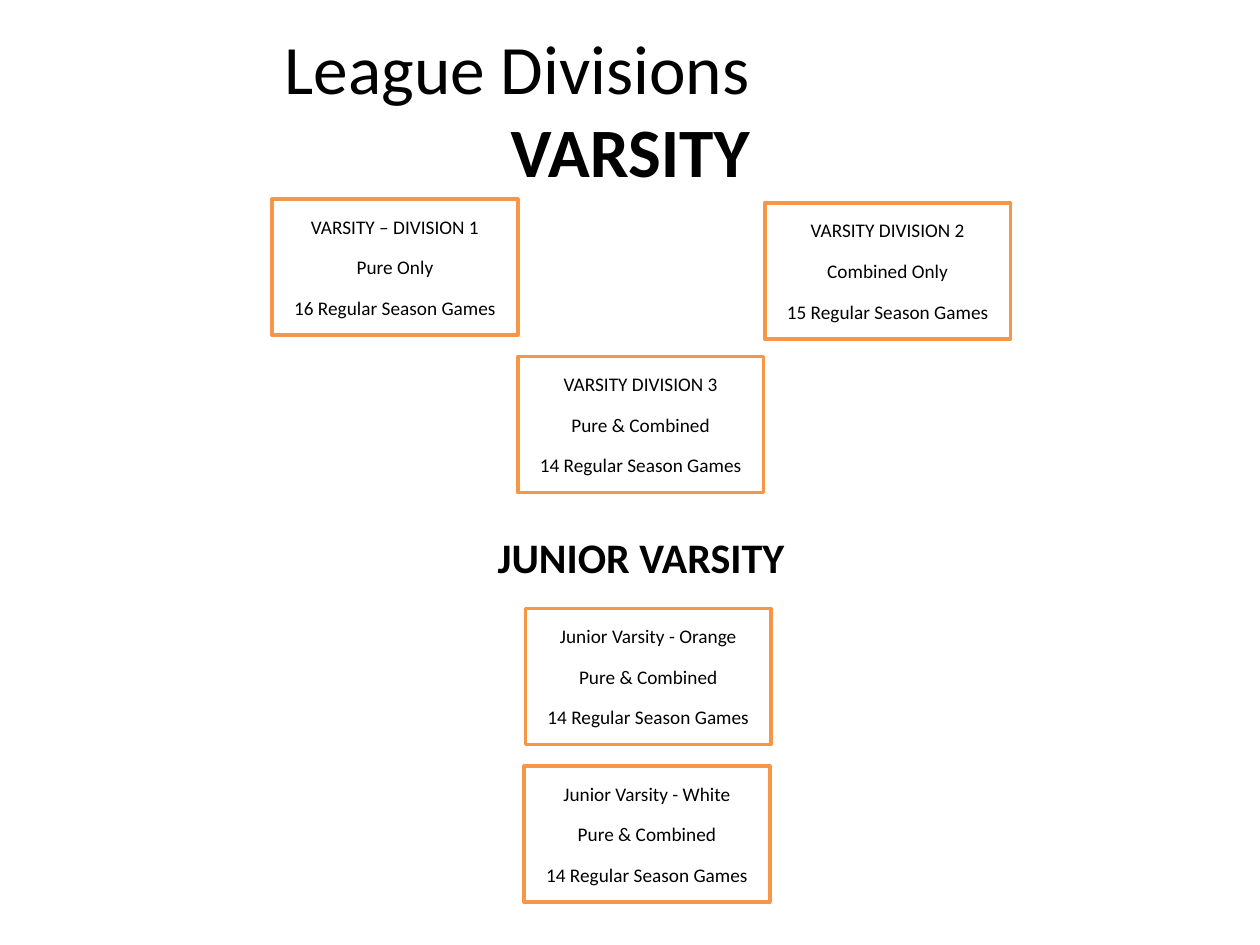
from dataclasses import dataclass

from pptx import Presentation
from pptx import util as u
from pptx.dml.color import RGBColor
from pptx.enum import shapes, text


@dataclass(frozen=True)
class Theme:
    font: str = "Calibri"
    ink: RGBColor = RGBColor(0, 0, 0)
    paper: RGBColor = RGBColor(255, 255, 255)
    accent: RGBColor = RGBColor(0xF7, 0x96, 0x46)
    title_size: float = 39.6
    heading_size: float = 24
    card_size: float = 11
    card_gap: float = 10
    border: float = 2


THEME = Theme()
CARD_WIDTH, CARD_HEIGHT = 1.95, 1.08
CARDS = [
    (4.17, 4.83, "Junior Varsity - Orange", "Pure & Combined", 14),
    (4.16, 6.08, "Junior Varsity - White", "Pure & Combined", 14),
    (2.16, 1.58, "VARSITY – DIVISION 1", "Pure Only", 16),
    (6.07, 1.61, "VARSITY DIVISION 2", "Combined Only", 15),
    (4.11, 2.83, "VARSITY DIVISION 3", "Pure & Combined", 14),
]


def write_line(frame, words, *, size, first=False, bold=False,
               align=text.PP_ALIGN.CENTER, space_after=0):
    para = frame.paragraphs[0] if first else frame.add_paragraph()
    para.alignment = align
    para.space_after = u.Pt(space_after)
    span = para.add_run()
    span.text = words
    span.font.name = THEME.font
    span.font.size = u.Pt(size)
    span.font.bold = bold
    span.font.color.rgb = THEME.ink


def add_text_box(page, left, top, width, height):
    box = page.shapes.add_textbox(*map(u.Inches, (left, top, width, height)))
    box.text_frame.word_wrap = True
    return box.text_frame


def add_title(page):
    frame = add_text_box(page, 0.5, 0.3, 9, 1.12)
    frame.vertical_anchor = text.MSO_ANCHOR.MIDDLE
    frame.margin_top = 0
    frame.margin_bottom = 0
    frame.margin_right = u.Inches(3.55)
    style = {"size": THEME.title_size, "align": text.PP_ALIGN.RIGHT}
    write_line(frame, "League Divisions", first=True, **style)
    write_line(frame, "VARSITY", bold=True, **style)


def add_heading(page):
    frame = add_text_box(page, 3.68, 4.17, 2.93, 0.5)
    frame.margin_left = u.Inches(0.27)
    write_line(frame, "JUNIOR VARSITY", size=THEME.heading_size, first=True,
               bold=True, align=text.PP_ALIGN.LEFT)


def add_card(page, left, top, division, teams, games):
    box = page.shapes.add_shape(
        shapes.MSO_SHAPE.RECTANGLE,
        *map(u.Inches, (left, top, CARD_WIDTH, CARD_HEIGHT)))
    box.shadow.inherit = False
    box.fill.solid()
    box.fill.fore_color.rgb = THEME.paper
    box.line.color.rgb = THEME.accent
    box.line.width = u.Pt(THEME.border)
    frame = box.text_frame
    frame.word_wrap = True
    frame.vertical_anchor = text.MSO_ANCHOR.MIDDLE
    lines = (division, teams, f"{games} Regular Season Games")
    for index, words in enumerate(lines):
        write_line(frame, words, size=THEME.card_size, first=index == 0,
                   space_after=THEME.card_gap if index < len(lines) - 1 else 0)


def main():
    deck = Presentation()
    deck.slide_width, deck.slide_height = u.Inches(10), u.Inches(7.5)
    page = deck.slides.add_slide(deck.slide_layouts[6])
    add_title(page)
    for card in CARDS:
        add_card(page, *card)
    add_heading(page)
    deck.save("out.pptx")


if __name__ == "__main__":
    main()
